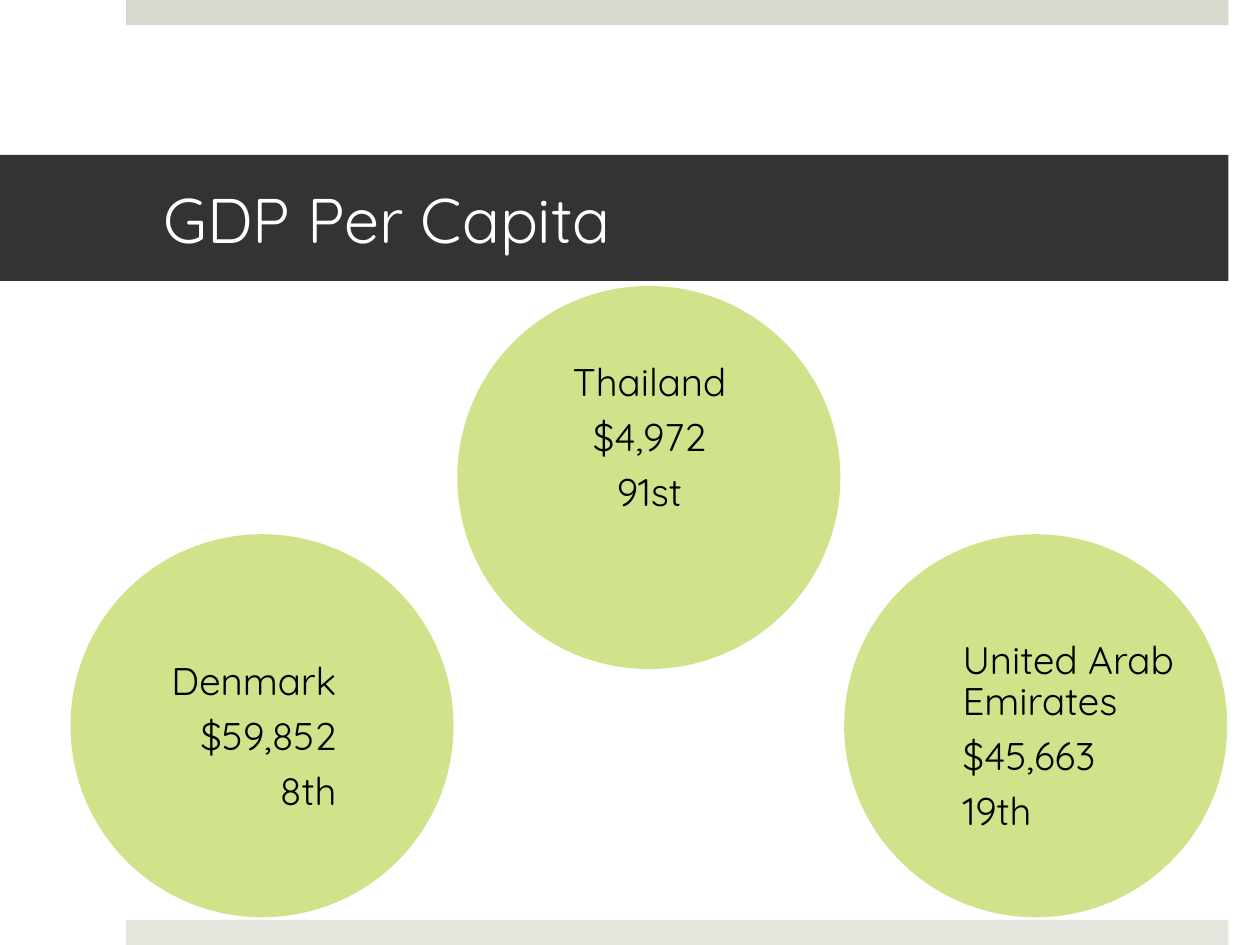
import lxml.etree
import pptx
import pptx.util
import pptx.dml.color
import pptx.enum.shapes
import pptx.enum.text
import pptx.oxml.ns

WIDTH, HEIGHT = 10, 7.5
FONT = "Quicksand"
COLORS = {
    "top_bar": "D6D9CD",
    "bottom_bar": "E4E6DE",
    "title_band": "333333",
    "title_text": "FFFFFF",
    "circle": "A2C816",
    "text": "000000",
}
SHAPES = pptx.enum.shapes.MSO_SHAPE
ALIGN = pptx.enum.text.PP_ALIGN

# Circle grid: three columns, two rows
CIRCLE_SIZE = 3.04
COLUMN_LEFT, COLUMN_STEP = 0.56, 3.07
ROW_TOP, ROW_STEP = 2.27, 1.97

# column, row, label offset and size within the circle, alignment, lines
COUNTRIES = [
    (1, 0, (0.41, 0.53, 2.23, 1.37), ALIGN.CENTER, ["Thailand", "$4,972", "91st"]),
    (2, 1, (0.94, 0.78, 1.83, 1.67), ALIGN.LEFT,
     ["United Arab Emirates", "$45,663", "19th"]),
    (0, 1, (0.28, 0.78, 1.83, 1.67), ALIGN.RIGHT, ["Denmark", "$59,852", "8th"]),
]


def inches(*lengths):
    return [pptx.util.Inches(length) for length in lengths]


def color(name):
    return pptx.dml.color.RGBColor.from_string(COLORS[name])


def set_values(target, values):
    for name, value in values.items():
        setattr(target, name, value)


def add_filled(page, kind, place, fill, opacity=100):
    shape = page.shapes.add_shape(kind, *inches(*place))
    shape.shadow.inherit = False
    shape.line.fill.background()
    shape.fill.solid()
    shape.fill.fore_color.rgb = color(fill)
    if opacity < 100:
        name = pptx.oxml.ns.qn
        tint = shape.element.spPr.find(".//" + name("a:srgbClr"))
        lxml.etree.SubElement(tint, name("a:alpha"), val=str(opacity * 1000))
    return shape


def write_lines(box, lines, size, ink, margins, para_format):
    frame = box.text_frame
    sides = ("margin_left", "margin_top", "margin_right", "margin_bottom")
    set_values(frame, dict(zip(sides, inches(*margins))))
    set_values(frame, {"word_wrap": True,
                       "vertical_anchor": pptx.enum.text.MSO_ANCHOR.MIDDLE})
    for index, line in enumerate(lines):
        para = frame.add_paragraph() if index else frame.paragraphs[0]
        set_values(para, para_format)
        span = para.add_run()
        span.text = line
        set_values(span.font, {"name": FONT, "size": pptx.util.Pt(size)})
        span.font.color.rgb = color(ink)


def add_country(page, column, row, label, align, lines):
    left = COLUMN_LEFT + column * COLUMN_STEP
    top = ROW_TOP + row * ROW_STEP
    add_filled(page, SHAPES.OVAL, (left, top, CIRCLE_SIZE, CIRCLE_SIZE), "circle", 50)
    across, down, width, height = label
    box = page.shapes.add_textbox(*inches(left + across, top + down, width, height))
    write_lines(box, lines, 22, "text", (0, 0, 0, 0),
                {"alignment": align, "line_spacing": 0.9,
                 "space_after": pptx.util.Pt(7.7)})


def main():
    deck = pptx.Presentation()
    deck.slide_width, deck.slide_height = inches(WIDTH, HEIGHT)
    page = deck.slides.add_slide(deck.slide_layouts[6])

    # Bars along the top and bottom edges
    bar_left, bar_width, bar_height = 0.1 * WIDTH, 0.875 * WIDTH, 0.2
    for top, fill in ((0, "top_bar"), (HEIGHT - bar_height, "bottom_bar")):
        add_filled(page, SHAPES.RECTANGLE, (bar_left, top, bar_width, bar_height), fill)

    # Title band
    band = add_filled(page, SHAPES.RECTANGLE, (0, 1.23, 0.975 * WIDTH, 1), "title_band")
    write_lines(band, ["GDP Per Capita"], 36, "title_text", (1.3, 0.05, 0.3, 0.05),
                {"alignment": ALIGN.LEFT})

    # Country circles
    for country in COUNTRIES:
        add_country(page, *country)

    deck.save("out.pptx")


if __name__ == "__main__":
    main()
